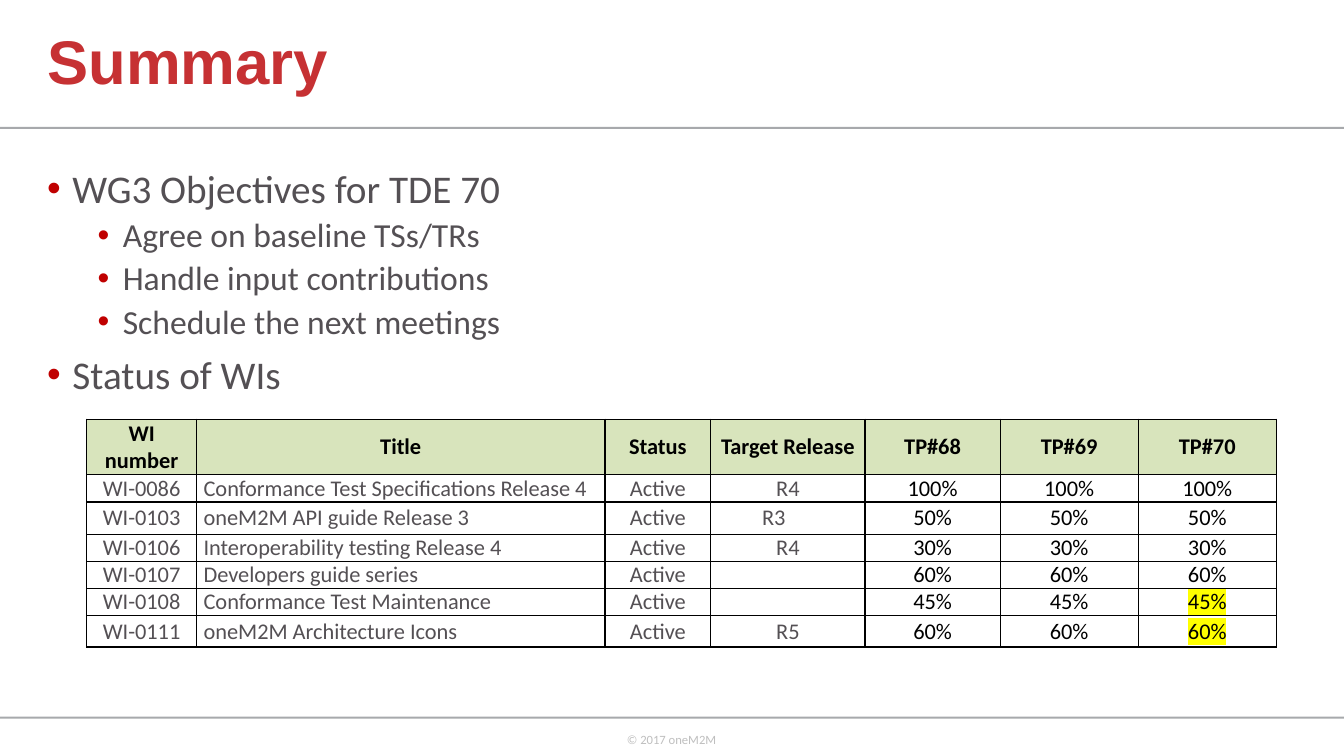
from lxml import etree
from pptx import Presentation
from pptx.dml.color import RGBColor
from pptx.enum.shapes import MSO_SHAPE
from pptx.enum.text import MSO_ANCHOR, MSO_AUTO_SIZE, PP_ALIGN
from pptx.oxml import parse_xml
from pptx.oxml.ns import qn
from pptx.util import Inches, Pt

RECTANGLE = MSO_SHAPE.RECTANGLE
MIDDLE = MSO_ANCHOR.MIDDLE
NO_AUTOFIT = MSO_AUTO_SIZE.NONE
LEFT, CENTER = PP_ALIGN.LEFT, PP_ALIGN.CENTER
DRAWING_NS = "http://schemas.openxmlformats.org/drawingml/2006/main"
RED, GREY, BLACK = "C63133", "545054", "000000"


def rgb(value):
    return RGBColor.from_string(value)


def add_run(paragraph, text, size, color, font="Calibri", bold=False, highlight=None):
    run = paragraph.add_run()
    run.text = text
    run.font.size = Pt(size)
    run.font.bold = bold
    run.font.color.rgb = rgb(color)
    if highlight:
        mark = etree.SubElement(run.font._element, qn("a:highlight"))
        etree.SubElement(mark, qn("a:srgbClr"), val=highlight)
    run.font.name = font


prs = Presentation()
prs.slide_width = Inches(13.33)
prs.slide_height = Inches(7.5)
slide = prs.slides.add_slide(prs.slide_layouts[5])

for rule_top in (1.26, 7.11):
    rule = slide.shapes.add_shape(RECTANGLE, 0, Inches(rule_top), prs.slide_width, Inches(0.02))
    rule.shadow.inherit = False
    rule.fill.solid()
    rule.fill.fore_color.rgb = rgb("A7A9AC")
    rule.line.fill.background()

copyright_line = slide.shapes.add_textbox(Inches(6.12), Inches(7.21), Inches(1.1), Inches(0.4))
copyright_line.text_frame.word_wrap = False
add_run(copyright_line.text_frame.paragraphs[0], "© 2017 oneM2M", 9, "BFBFBF")

title = slide.shapes.title
title.left, title.top = Inches(0.37), Inches(0)
title.width, title.height = Inches(11.28), Inches(1.28)
title.text_frame.auto_size = NO_AUTOFIT
title.text_frame.vertical_anchor = MIDDLE
heading = title.text_frame.paragraphs[0]
heading.alignment = LEFT
heading.line_spacing = 0.9
add_run(heading, "Summary", 44, RED, "Arial", True)

objectives = [
    (0, "WG3 Objectives for TDE 70"),
    (1, "Agree on baseline TSs/TRs"),
    (1, "Handle input contributions"),
    (1, "Schedule the next meetings"),
    (0, "Status of WIs"),
]
agenda = slide.shapes.add_textbox(Inches(0.37), Inches(1.63), Inches(11.5), Inches(2.58)).text_frame
agenda.word_wrap = True
for index, (level, text) in enumerate(objectives):
    item = agenda.add_paragraph() if index else agenda.paragraphs[0]
    item.level = level
    item.line_spacing = 0.9
    if index:
        item.space_before = Pt(5 if level else 10)
    properties = item._p.get_or_add_pPr()
    properties.set("marL", str(Inches(0.25 + 0.5 * level)))
    properties.set("indent", str(Inches(-0.25)))
    bullet_color = etree.SubElement(properties, qn("a:buClr"))
    etree.SubElement(bullet_color, qn("a:srgbClr"), val="C00000")
    etree.SubElement(properties, qn("a:buFont"), typeface="Arial")
    etree.SubElement(properties, qn("a:buChar"), char="•")
    add_run(item, text, 24 if level else 28, GREY)

work_items = [
    ("WI number", "Title", "Status", "Target Release", "TP#68", "TP#69", "TP#70"),
    ("WI-0086", "Conformance Test Specifications Release 4", "Active", "R4", "100%", "100%", "100%"),
    ("WI-0103", "oneM2M API guide Release 3", "Active", "R3", "50%", "50%", "50%"),
    ("WI-0106", "Interoperability testing Release 4", "Active", "R4", "30%", "30%", "30%"),
    ("WI-0107", "Developers guide series", "Active", "", "60%", "60%", "60%"),
    ("WI-0108", "Conformance Test Maintenance", "Active", "", "45%", "45%", "45%"),
    ("WI-0111", "oneM2M Architecture Icons", "Active", "R5", "60%", "60%", "60%"),
]
column_widths = [1.09, 4.05, 1.05, 1.53, 1.34, 1.37, 1.37]
row_heights = [0.55, 0.27, 0.32, 0.27, 0.27, 0.27, 0.31]
highlighted = {(5, 6), (6, 6)}

status_table = slide.shapes.add_table(
    len(work_items), len(column_widths), Inches(0.86), Inches(4.16), Inches(11.8), Inches(2.26)
).table
for column, width in zip(status_table.columns, column_widths):
    column.width = Inches(width)
for row, height in zip(status_table.rows, row_heights):
    row.height = Inches(height)

for r, values in enumerate(work_items):
    for c, value in enumerate(values):
        cell = status_table.cell(r, c)
        cell.vertical_anchor = MIDDLE
        cell.margin_left = Inches(0.07)
        cell.margin_right = Inches(0.35 if value == "R3" else 0.07)
        cell.margin_top = cell.margin_bottom = 0
        cell_properties = cell._tc.get_or_add_tcPr()
        for side in ("lnL", "lnR", "lnT", "lnB"):
            cell_properties.append(parse_xml(
                f'<a:{side} xmlns:a="{DRAWING_NS}" w="{Pt(1)}"><a:solidFill>'
                f'<a:srgbClr val="{BLACK}"/></a:solidFill></a:{side}>'
            ))
        cell.fill.solid()
        cell.fill.fore_color.rgb = rgb("FFFFFF" if r else "D8E4BC")
        entry = cell.text_frame.paragraphs[0]
        entry.alignment = LEFT if r and c == 1 else CENTER
        if value:
            add_run(entry, value, 16, GREY if r and c < 4 else BLACK, bold=r == 0,
                    highlight="FFFF00" if (r, c) in highlighted else None)
        else:
            etree.SubElement(entry._p, qn("a:endParaRPr"), sz="1600")

prs.save("out.pptx")
